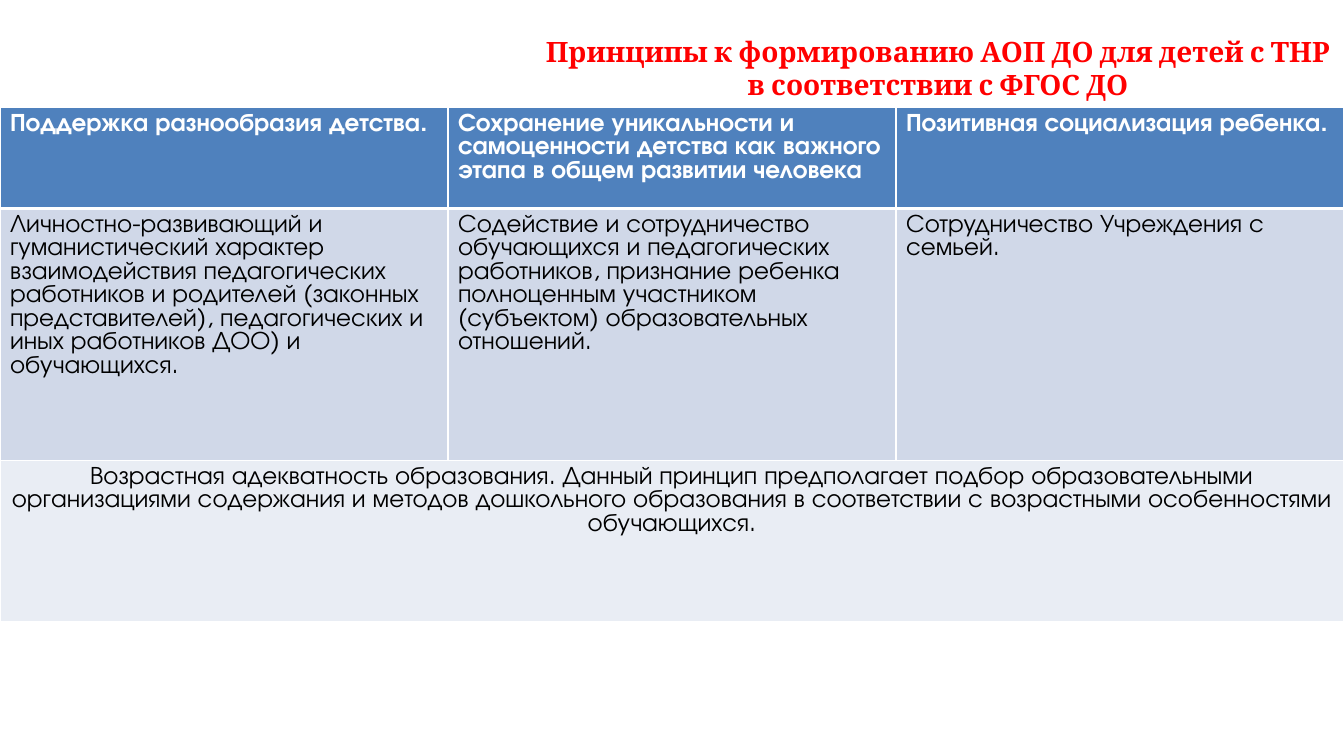
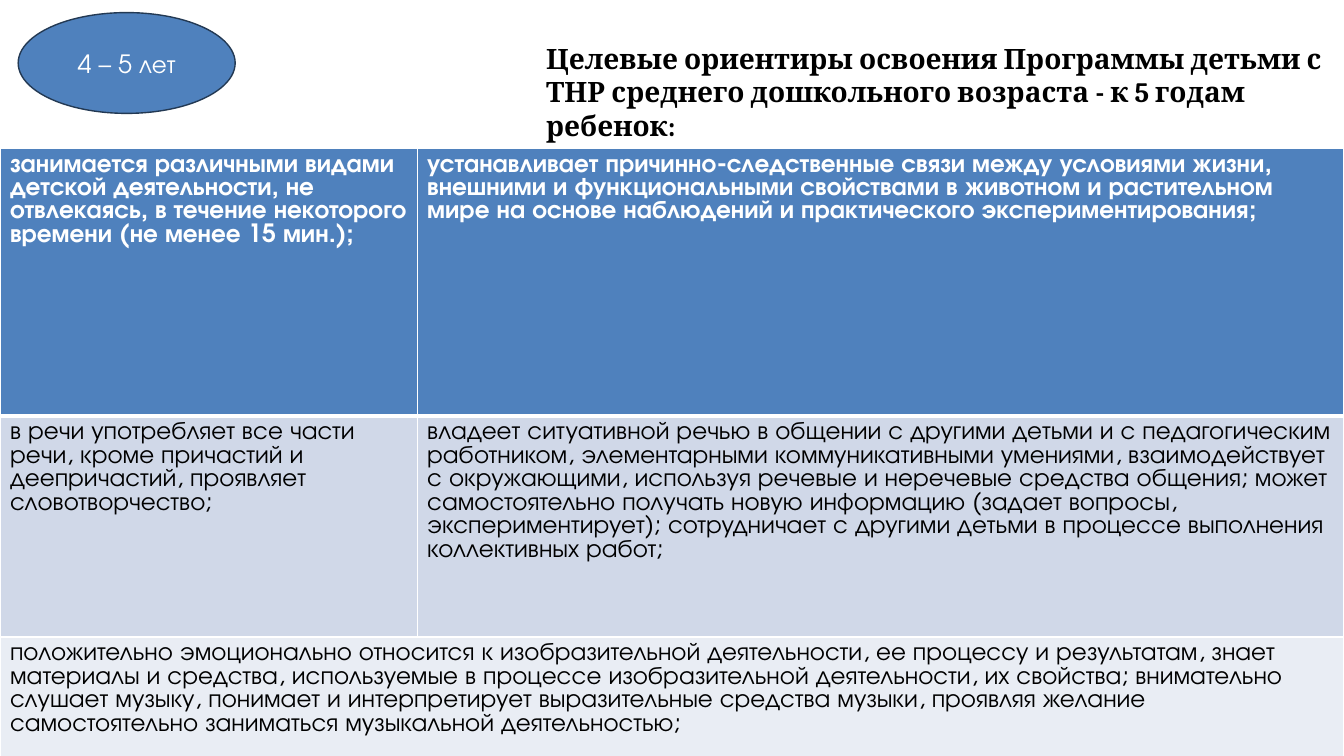
from lxml.etree import SubElement
from pptx import Presentation
from pptx.dml.color import RGBColor
from pptx.enum.shapes import MSO_SHAPE
from pptx.enum.text import MSO_ANCHOR, PP_ALIGN
from pptx.oxml.ns import qn
from pptx.util import Pt

WHITE = RGBColor(0xFF, 0xFF, 0xFF)
BLACK = RGBColor(0x00, 0x00, 0x00)
RED = RGBColor(0xFF, 0x00, 0x00)
BLUE = RGBColor(0x4F, 0x81, 0xBD)
NAVY = RGBColor(0x23, 0x39, 0x53)
PALE_BLUE = RGBColor(0xD0, 0xD8, 0xE8)
PALE_GREY = RGBColor(0xE9, 0xED, 0xF4)

TITLE_FONT = "Cambria"
BODY_FONT = "TeX Gyre Adventor"
TITLE_SIZE = 20
BODY_SIZE = 18
SLIDE_WIDTH, SLIDE_HEIGHT = 960, 540
ROW_FILLS = (BLUE, PALE_BLUE, PALE_GREY)

PRINCIPLES = (
    (
        "Поддержка разнообразия детства.",
        "Сохранение уникальности и самоценности детства как важного этапа в общем "
        "развитии человека",
        "Позитивная социализация ребенка.",
    ),
    (
        "Личностно-развивающий и гуманистический характер взаимодействия педагогических "
        "работников и родителей (законных представителей), педагогических и иных "
        "работников ДОО) и обучающихся.",
        "Содействие и сотрудничество обучающихся и педагогических работников, признание "
        "ребенка полноценным участником (субъектом) образовательных отношений.",
        "Сотрудничество Учреждения с семьей.",
    ),
    (
        "Возрастная адекватность образования. Данный принцип предполагает подбор "
        "образовательными организациями содержания и методов дошкольного образования "
        "в соответствии с возрастными особенностями обучающихся.",
    ),
)

TARGETS = (
    (
        "занимается различными видами детской деятельности, не отвлекаясь, в течение "
        "некоторого времени (не менее 15 мин.);",
        "устанавливает причинно-следственные связи между условиями жизни, внешними и "
        "функциональными свойствами в животном и растительном мире на основе наблюдений "
        "и практического экспериментирования;",
    ),
    (
        "в речи употребляет все части речи, кроме причастий и деепричастий, проявляет "
        "словотворчество;",
        "владеет ситуативной речью в общении с другими детьми и с педагогическим "
        "работником, элементарными коммуникативными умениями, взаимодействует с "
        "окружающими, используя речевые и неречевые средства общения; может "
        "самостоятельно получать новую информацию (задает вопросы, экспериментирует); "
        "сотрудничает с другими детьми в процессе выполнения коллективных работ;",
    ),
    (
        "положительно эмоционально относится к изобразительной деятельности, ее процессу "
        "и результатам, знает материалы и средства, используемые в процессе "
        "изобразительной деятельности, их свойства; внимательно слушает музыку, понимает "
        "и интерпретирует выразительные средства музыки, проявляя желание самостоятельно "
        "заниматься музыкальной деятельностью;",
    ),
)


def write_text(frame, text, font_name, size, color, bold=False, align=PP_ALIGN.LEFT):
    frame.word_wrap = True
    paragraph = frame.paragraphs[0]
    paragraph.alignment = align
    run = paragraph.add_run()
    run.text = text
    run.font.name = font_name
    run.font.size = Pt(size)
    run.font.color.rgb = color
    run.font.bold = bold


def add_title(slide, box, text, color, align=PP_ALIGN.LEFT):
    text_box = slide.shapes.add_textbox(*map(Pt, box))
    write_text(text_box.text_frame, text, TITLE_FONT, TITLE_SIZE, color, True, align)


def set_borders(cell, widths):
    """Draw white borders; widths maps a side tag such as a:lnL to points."""
    properties = cell._tc.get_or_add_tcPr()
    for position, (side, width) in enumerate(widths.items()):
        line = SubElement(properties, qn(side), w=str(Pt(width)))
        fill = SubElement(line, qn("a:solidFill"))
        SubElement(fill, qn("a:srgbClr"), val=str(WHITE))
        properties.insert(position, line)


def add_text_table(slide, top, column_widths, row_heights, rows, last_align=PP_ALIGN.LEFT):
    """Full-width table with a header row and a last row merged into one cell."""
    frame = slide.shapes.add_table(
        len(rows), len(column_widths), Pt(0), Pt(top), Pt(SLIDE_WIDTH), Pt(sum(row_heights))
    )
    table = frame.table
    for column, width in zip(table.columns, column_widths):
        column.width = Pt(width)
    last_row = len(rows) - 1
    table.cell(last_row, 0).merge(table.cell(last_row, len(column_widths) - 1))

    for row_index, (row, height) in enumerate(zip(table.rows, row_heights)):
        row.height = Pt(height)
        is_header = row_index == 0
        top_width = 3 if row_index == 1 else 1
        bottom_width = 3 if is_header else 1
        for cell in row.cells:
            cell.fill.solid()
            cell.fill.fore_color.rgb = ROW_FILLS[row_index]
            set_borders(
                cell, {"a:lnL": 1, "a:lnR": 1, "a:lnT": top_width, "a:lnB": bottom_width}
            )
        for cell, text in zip(row.cells, rows[row_index]):
            write_text(
                cell.text_frame, text, BODY_FONT, BODY_SIZE,
                WHITE if is_header else BLACK, is_header,
                last_align if row_index == last_row else PP_ALIGN.LEFT,
            )


def add_age_badge(slide, box, text):
    badge = slide.shapes.add_shape(MSO_SHAPE.OVAL, *map(Pt, box))
    badge.shadow.inherit = False
    badge.fill.solid()
    badge.fill.fore_color.rgb = BLUE
    badge.line.color.rgb = NAVY
    badge.line.width = Pt(1)
    badge.text_frame.vertical_anchor = MSO_ANCHOR.MIDDLE
    write_text(badge.text_frame, text, BODY_FONT, BODY_SIZE, WHITE, align=PP_ALIGN.CENTER)


def build_principles_slide(slide):
    add_title(
        slide, (380, 21, 580, 56),
        "Принципы к формированию АОП ДО для детей с ТНР в соответствии с ФГОС ДО",
        RED, PP_ALIGN.CENTER,
    )
    add_text_table(
        slide, 77, [SLIDE_WIDTH / 3] * 3, (72, 180, 115), PRINCIPLES, PP_ALIGN.CENTER
    )


def build_targets_slide(slide):
    add_title(
        slide, (383, 26, 590, 80),
        "Целевые ориентиры освоения Программы детьми с ТНР среднего дошкольного "
        "возраста - к 5 годам ребенок:",
        BLACK,
    )
    top, header_height, middle_height = 106, 191, 158
    last_height = SLIDE_HEIGHT - top - header_height - middle_height
    add_text_table(
        slide, top, (298, SLIDE_WIDTH - 298),
        (header_height, middle_height, last_height), TARGETS,
    )
    add_age_badge(slide, (13, 9, 155, 72), "4 – 5 лет")


def main():
    presentation = Presentation()
    presentation.slide_width = Pt(SLIDE_WIDTH)
    presentation.slide_height = Pt(SLIDE_HEIGHT)
    blank_layout = presentation.slide_layouts[6]
    for build_slide in (build_principles_slide, build_targets_slide):
        build_slide(presentation.slides.add_slide(blank_layout))
    presentation.save("out.pptx")


if __name__ == "__main__":
    main()
